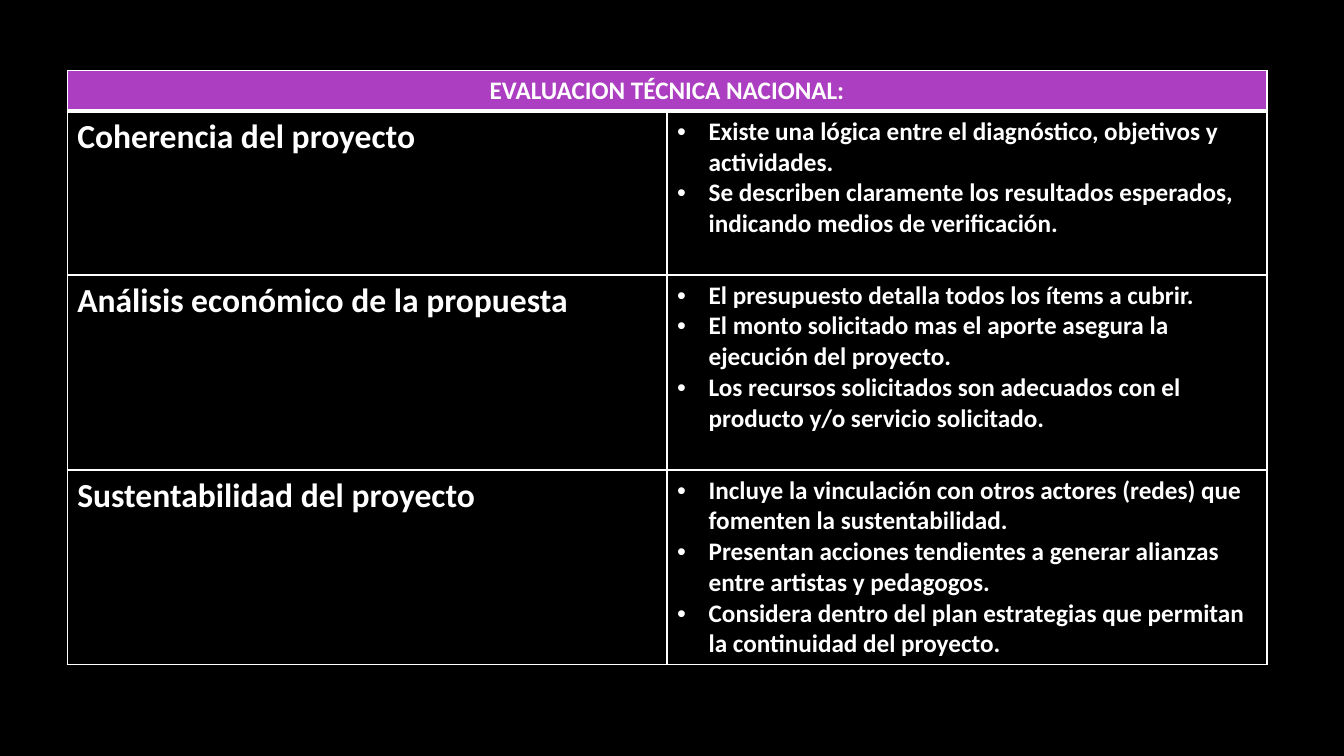
from pptx import Presentation
from pptx.util import Pt
from pptx.dml.color import RGBColor
from pptx.enum.text import PP_ALIGN as Align
from lxml.etree import SubElement as Sub, Element
from pptx.oxml.ns import qn


def paint(fill, color):
    fill.solid()
    fill.fore_color.rgb = RGBColor.from_string(color)


def write(para, text, size):
    run = para.add_run()
    run.text = text
    run.font.name = "Calibri"
    run.font.size = Pt(size)
    run.font.bold = True
    paint(run.font.fill, "FFFFFF")


title = "EVALUACION TÉCNICA NACIONAL:"
topics = [
    ("Coherencia del proyecto", [
        "Existe una lógica entre el diagnóstico, objetivos y actividades.",
        "Se describen claramente los resultados esperados, indicando medios de verificación."]),
    ("Análisis económico de la propuesta", [
        "El presupuesto detalla todos los ítems a cubrir.",
        "El monto solicitado mas el aporte asegura la ejecución del proyecto.",
        "Los recursos solicitados son adecuados con el producto y/o servicio solicitado."]),
    ("Sustentabilidad del proyecto", [
        "Incluye la vinculación con otros actores (redes) que fomenten la sustentabilidad.",
        "Presentan acciones tendientes a generar alianzas entre artistas y pedagogos.",
        "Considera dentro del plan estrategias que permitan la continuidad del proyecto."]),
]
heights = [29.3, 117, 139.3, 139]

# Slide
deck = Presentation()
deck.slide_width, deck.slide_height = Pt(960), Pt(540)
slide = deck.slides.add_slide(deck.slide_layouts[6])
paint(slide.background.fill, "000000")

# Table grid
frame = slide.shapes.add_table(4, 2, Pt(48), Pt(50.2), Pt(857), Pt(sum(heights)))
table = frame.table
table.horz_banding = False
for col in table.columns:
    col.width = Pt(428.5)
for row, high in zip(table.rows, heights):
    row.height = Pt(high)

# Fills and borders, with a thick rule under the header
for r, row in enumerate(table.rows):
    for cell in row.cells:
        if r == 0:
            paint(cell.fill, "AC3EC1")
        else:
            cell.fill.background()
        props = cell._tc.get_or_add_tcPr()
        for i, side in enumerate("LRTB"):
            thick = (r, side) in [(0, "B"), (1, "T")]
            line = Element(qn("a:ln" + side), w=str(Pt(3 if thick else 1)))
            Sub(Sub(line, qn("a:solidFill")), qn("a:srgbClr"), val="FFFFFF")
            props.insert(i, line)

# Header
head = table.cell(0, 0)
head.merge(table.cell(0, 1))
para = head.text_frame.paragraphs[0]
para.alignment = Align.CENTER
write(para, title, 18)

# Topics and their bullets
for r, (topic, points) in enumerate(topics, 1):
    write(table.cell(r, 0).text_frame.paragraphs[0], topic, 24)
    body = table.cell(r, 1).text_frame
    for i, point in enumerate(points):
        para = body.add_paragraph() if i else body.paragraphs[0]
        props = para._p.get_or_add_pPr()
        props.set("marL", str(Pt(22.5)))
        props.set("indent", str(-Pt(22.5)))
        Sub(props, qn("a:buFont"), typeface="Arial")
        Sub(props, qn("a:buChar"), char="•")
        write(para, point, 18)

deck.save("out.pptx")
